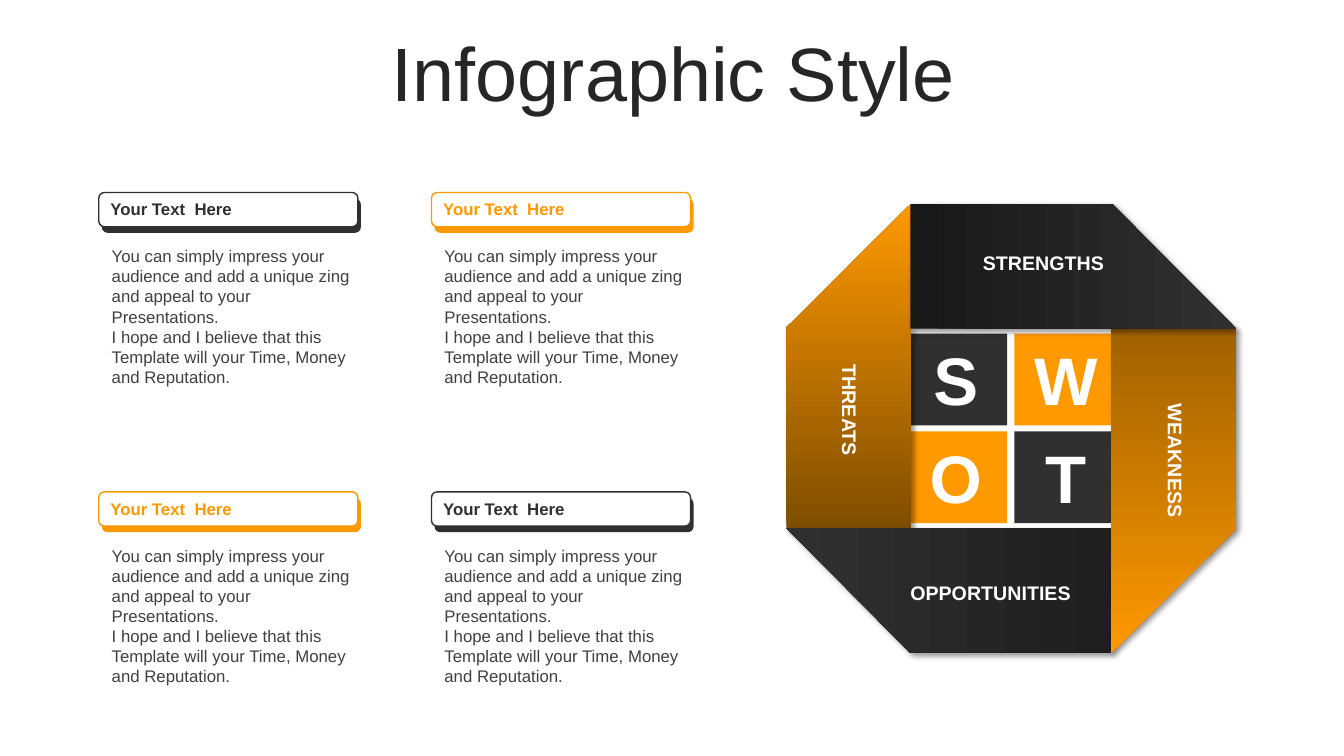
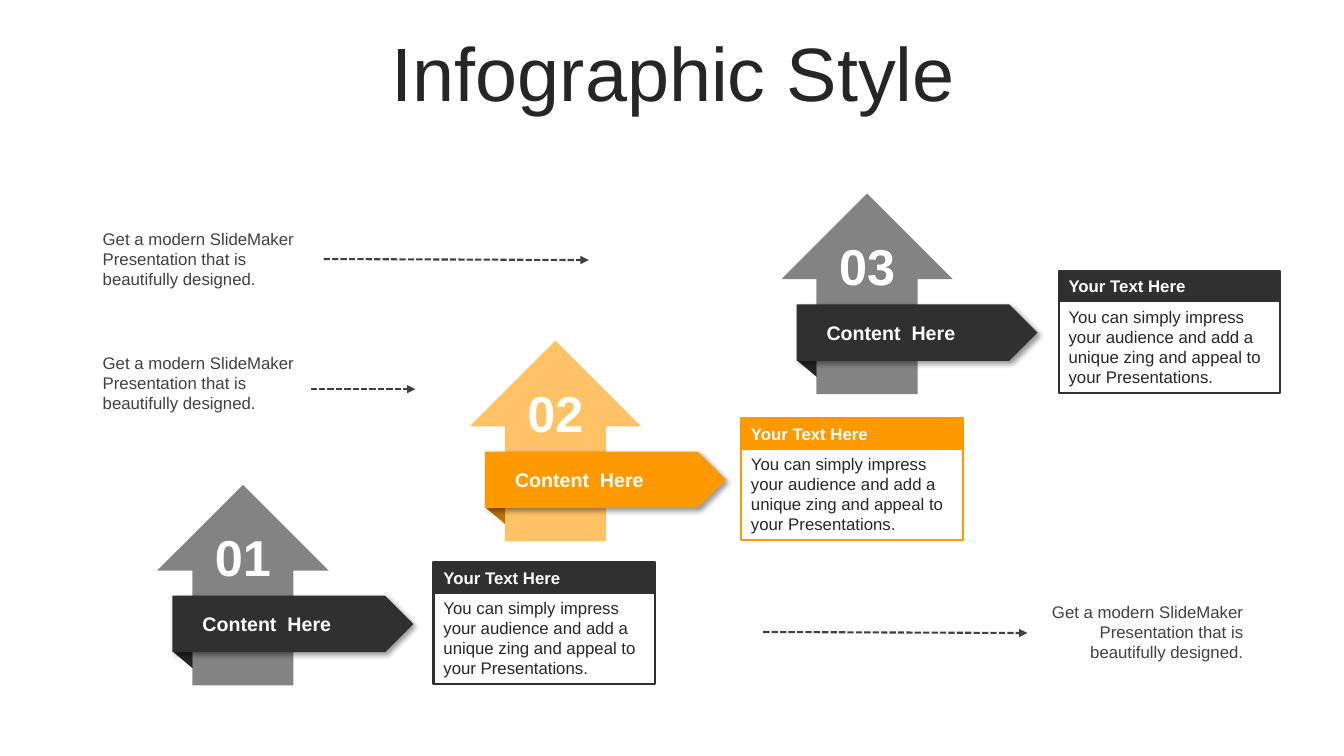
"""Build two infographic slides: a SWOT octagon and three rising steps."""

from dataclasses import dataclass
from typing import NamedTuple

import lxml.etree
import pptx
import pptx.dml.color
import pptx.enum.dml
import pptx.enum.shapes
import pptx.enum.text
import pptx.oxml.ns
import pptx.shapes.autoshape
import pptx.slide
import pptx.text.text
import pptx.util

Inches = pptx.util.Inches
RGBColor = pptx.dml.color.RGBColor
Shape = pptx.shapes.autoshape.Shape
Slide = pptx.slide.Slide
SHAPE = pptx.enum.shapes.MSO_SHAPE
ALIGN = pptx.enum.text.PP_ALIGN
ANCHOR = pptx.enum.text.MSO_ANCHOR
qualify = pptx.oxml.ns.qn

FONT = "Arial"
WHITE = RGBColor(0xFF, 0xFF, 0xFF)
DARK = RGBColor(0x30, 0x30, 0x30)
ORANGE = RGBColor(0xFE, 0x99, 0x00)
GRAY = RGBColor(0x83, 0x83, 0x83)
LIGHT_ORANGE = RGBColor(0xFF, 0xC2, 0x65)
DARK_FOLD = RGBColor(0x24, 0x24, 0x24)
ORANGE_FOLD = RGBColor(0xBE, 0x73, 0x00)
BLACK_SHADE = RGBColor(0x18, 0x18, 0x18)
DARK_SHADE = RGBColor(0x1F, 0x1F, 0x1F)
BROWN_SHADE = RGBColor(0x7F, 0x4D, 0x00)
ORANGE_SHADE = RGBColor(0xA0, 0x61, 0x00)
TITLE_TEXT = RGBColor(0x26, 0x26, 0x26)
BODY_TEXT = RGBColor(0x40, 0x40, 0x40)

IMPRESS = "You can simply impress your audience and add a unique zing and appeal to your Presentations."
HOPE = "I hope and I believe that this Template will your Time, Money and Reputation."
MODERN = "Get a modern SlideMaker Presentation that is beautifully designed."


class Box(NamedTuple):
    """Left, top, width and height in inches."""

    left: float
    top: float
    width: float
    height: float

    def lengths(self) -> list[int]:
        """Return the four values as lengths."""
        return [Inches(value) for value in self]


class Point(NamedTuple):
    """A place in inches."""

    x: float
    y: float


@dataclass(frozen=True)
class Band:
    """One side of the octagon, given by its quarter turns from the top."""

    label: str
    turns: int
    shade: RGBColor
    color: RGBColor
    label_box: Box
    label_rotation: int = 0


@dataclass(frozen=True)
class Step:
    """One numbered arrow with its card."""

    number: str
    left: float
    top: float
    card_left: float
    arrow_color: RGBColor
    color: RGBColor
    fold_color: RGBColor


@dataclass(frozen=True)
class Note:
    """A short remark with a dashed arrow."""

    box: Box
    start: Point
    end: Point
    align: ALIGN = ALIGN.LEFT


CENTER = Point(10.03, 4.25)
BAND_OUTLINE = (Point(-1, -2.23), Point(1, -2.23), Point(2.23, -0.99), Point(-1, -0.99))
BANDS = (
    Band("THREATS", 3, BROWN_SHADE, ORANGE, Box(7.32, 3.92, 2.22, 0.3), 90),
    Band("OPPORTUNITIES", 2, DARK_SHADE, DARK, Box(8.61, 5.73, 2.43, 0.3)),
    Band("WEAKNESS", 1, ORANGE_SHADE, ORANGE, Box(10.55, 4.42, 2.22, 0.3), 90),
    Band("STRENGTHS", 0, BLACK_SHADE, DARK, Box(9.23, 2.46, 2.24, 0.3)),
)
STEPS = (
    Step("01", 1.56, 4.81, 4.3, GRAY, DARK, DARK_FOLD),
    Step("02", 4.66, 3.38, 7.35, LIGHT_ORANGE, ORANGE, ORANGE_FOLD),
    Step("03", 7.75, 1.92, 10.5, GRAY, DARK, DARK_FOLD),
)
NOTES = (
    Note(Box(0.92, 2.22, 2.29, 0.71), Point(3.21, 2.57), Point(5.84, 2.58)),
    Note(Box(0.92, 3.45, 2.29, 0.71), Point(3.08, 3.86), Point(4.12, 3.86)),
    Note(Box(10.14, 5.92, 2.29, 0.71), Point(7.57, 6.27), Point(10.19, 6.28), ALIGN.RIGHT),
)


def write(
    shape: Shape,
    *texts: str,
    size: float = 12,
    color: RGBColor = BODY_TEXT,
    bold: bool = False,
    align: ALIGN = ALIGN.LEFT,
    anchor: ANCHOR = ANCHOR.TOP,
) -> list[pptx.text.text._Paragraph]:
    """Write one paragraph per text into the shape."""
    frame = shape.text_frame
    frame.word_wrap = True
    frame.vertical_anchor = anchor
    paragraphs = [frame.paragraphs[0]] + [frame.add_paragraph() for _ in texts[1:]]
    for paragraph, text in zip(paragraphs, texts):
        paragraph.alignment = align
        run = paragraph.add_run()
        run.text = text
        run.font.name = FONT
        run.font.size = pptx.util.Pt(size)
        run.font.bold = bold
        run.font.color.rgb = color
    return paragraphs


def add_text_box(slide: Slide, box: Box) -> Shape:
    """Add an empty text box."""
    return slide.shapes.add_textbox(*box.lengths())


def style(
    shape: Shape,
    fill: RGBColor | None,
    line: RGBColor | None = None,
    line_width: float = 1,
    shadow: bool = False,
) -> Shape:
    """Set fill, outline and shadow of a shape."""
    if fill is None:
        shape.fill.background()
    else:
        shape.fill.solid()
        shape.fill.fore_color.rgb = fill
    if line is None:
        shape.line.fill.background()
    else:
        shape.line.color.rgb = line
        shape.line.width = pptx.util.Pt(line_width)
    shape.shadow.inherit = False
    if shadow:
        effects = shape.element.spPr.find(qualify("a:effectLst"))
        outer = lxml.etree.SubElement(
            effects,
            qualify("a:outerShdw"),
            blurRad=str(pptx.util.Pt(4)),
            dist=str(pptx.util.Pt(3)),
            dir="2700000",
            algn="tl",
            rotWithShape="0",
        )
        black = lxml.etree.SubElement(outer, qualify("a:srgbClr"), val="000000")
        lxml.etree.SubElement(black, qualify("a:alpha"), val="40000")
    return shape


def add_shape(slide: Slide, kind: SHAPE, box: Box, fill: RGBColor | None, **look) -> Shape:
    """Add a styled preset shape."""
    return style(slide.shapes.add_shape(kind, *box.lengths()), fill, **look)


def add_outline(slide: Slide, points: list[Point], fill: RGBColor, **look) -> Shape:
    """Add a styled closed polygon."""
    corners = [(Inches(point.x), Inches(point.y)) for point in points]
    builder = slide.shapes.build_freeform(*corners[0])
    builder.add_line_segments(corners[1:], close=True)
    return style(builder.convert_to_shape(), fill, **look)


def add_dashed_arrow(slide: Slide, start: Point, end: Point) -> None:
    """Add a dashed line that ends in an arrowhead."""
    connector = slide.shapes.add_connector(
        pptx.enum.shapes.MSO_CONNECTOR.STRAIGHT, *[Inches(value) for value in (*start, *end)]
    )
    connector.line.color.rgb = BODY_TEXT
    connector.line.width = pptx.util.Pt(1.5)
    connector.line.dash_style = pptx.enum.dml.MSO_LINE.SQUARE_DOT
    properties = connector.element.spPr
    lxml.etree.SubElement(properties.find(qualify("a:ln")), qualify("a:tailEnd"), type="triangle")
    lxml.etree.SubElement(properties, qualify("a:effectLst"))


def add_titled_slide(presentation: pptx.presentation.Presentation) -> Slide:
    """Add a blank slide with the shared title."""
    slide = presentation.slides.add_slide(presentation.slide_layouts[6])
    title = add_text_box(slide, Box(0.35, 0.37, 12.66, 0.79))
    paragraph = write(
        title, "Infographic Style", size=54, color=TITLE_TEXT, align=ALIGN.CENTER, anchor=ANCHOR.MIDDLE
    )[0]
    paragraph.line_spacing = 0.9
    paragraph.space_before = pptx.util.Pt(10)
    return slide


def add_band(slide: Slide, band: Band) -> None:
    """Add one shaded side of the octagon."""
    points = list(BAND_OUTLINE)
    for _ in range(band.turns):
        points = [Point(-point.y, point.x) for point in points]
    points = [Point(CENTER.x + point.x, CENTER.y + point.y) for point in points]
    shape = add_outline(slide, points, band.color, shadow=True)
    shape.fill.gradient()
    shape.fill.gradient_angle = -90 * band.turns % 360
    for stop, color in zip(shape.fill.gradient_stops, (band.shade, band.color)):
        stop.color.rgb = color


def add_swot(slide: Slide) -> None:
    """Add the letter tiles, the bands and their labels."""
    for index, letter in enumerate("SWOT"):
        row, column = divmod(index, 2)
        box = Box(8.97 + 1.09 * column, 3.31 + 0.97 * row, 1.02, 0.91)
        tile = add_shape(slide, SHAPE.RECTANGLE, box, (DARK, ORANGE)[(row + column) % 2])
        write(tile, letter, size=48, color=WHITE, bold=True, align=ALIGN.CENTER)
    for band in BANDS:
        add_band(slide, band)
    for band in BANDS:
        label = add_text_box(slide, band.label_box)
        label.rotation = band.label_rotation
        write(label, band.label, size=14, color=WHITE, bold=True, align=ALIGN.CENTER, anchor=ANCHOR.MIDDLE)


def add_text_block(slide: Slide, left: float, top: float, color: RGBColor) -> None:
    """Add a raised heading with two paragraphs below it."""
    add_shape(slide, SHAPE.ROUNDED_RECTANGLE, Box(left + 0.03, top + 0.06, 2.57, 0.34), color)
    heading = add_shape(slide, SHAPE.ROUNDED_RECTANGLE, Box(left, top, 2.57, 0.34), WHITE, line=color)
    write(heading, "Your Text  Here", color=color, bold=True)
    write(add_text_box(slide, Box(left + 0.03, top + 0.48, 2.57, 1.51)), IMPRESS, HOPE)


def add_step(slide: Slide, step: Step) -> None:
    """Add a numbered arrow, its ribbon and its card."""
    left, top = step.left, step.top
    arrow = add_shape(slide, SHAPE.UP_ARROW, Box(left, top, 1.7, 1.99), step.arrow_color)
    arrow.adjustments[0] = 0.59
    arrow.adjustments[1] = 0.5
    fold = [Point(left + 0.16, top + 1.66), Point(left + 0.35, top + 1.66), Point(left + 0.35, top + 1.82)]
    add_outline(slide, fold, step.fold_color)
    add_shape(slide, SHAPE.PENTAGON, Box(left + 0.15, top + 1.1, 2.39, 0.56), step.color, shadow=True)
    ribbon_text = add_text_box(slide, Box(left + 0.35, top + 1.21, 1.7, 0.34))
    write(ribbon_text, "Content  Here", size=14, color=WHITE, bold=True, anchor=ANCHOR.MIDDLE)
    number = add_text_box(slide, Box(left + 0.4, top + 0.36, 0.9, 0.71))
    write(number, step.number, size=36, color=WHITE, bold=True, align=ALIGN.CENTER)
    border = {"line": step.color, "line_width": 1.5}
    body = add_shape(slide, SHAPE.RECTANGLE, Box(step.card_left, top + 1.07, 2.2, 0.91), None, **border)
    write(body, IMPRESS, color=TITLE_TEXT)
    heading = add_shape(slide, SHAPE.RECTANGLE, Box(step.card_left, top + 0.77, 2.2, 0.3), step.color, **border)
    write(heading, "Your Text Here", color=WHITE, bold=True)


def main() -> None:
    """Build and save the presentation."""
    presentation = pptx.Presentation()
    presentation.slide_width = Inches(13.33)
    presentation.slide_height = Inches(7.5)

    swot_slide = add_titled_slide(presentation)
    add_swot(swot_slide)
    for row in range(2):
        for column in range(2):
            color = (DARK, ORANGE)[(row + column) % 2]
            add_text_block(swot_slide, 0.98 + 3.3 * column, 1.91 + 2.97 * row, color)

    steps_slide = add_titled_slide(presentation)
    for step in STEPS:
        add_step(steps_slide, step)
    for note in NOTES:
        write(add_text_box(steps_slide, note.box), MODERN, align=note.align)
        add_dashed_arrow(steps_slide, note.start, note.end)

    presentation.save("out.pptx")


if __name__ == "__main__":
    main()
